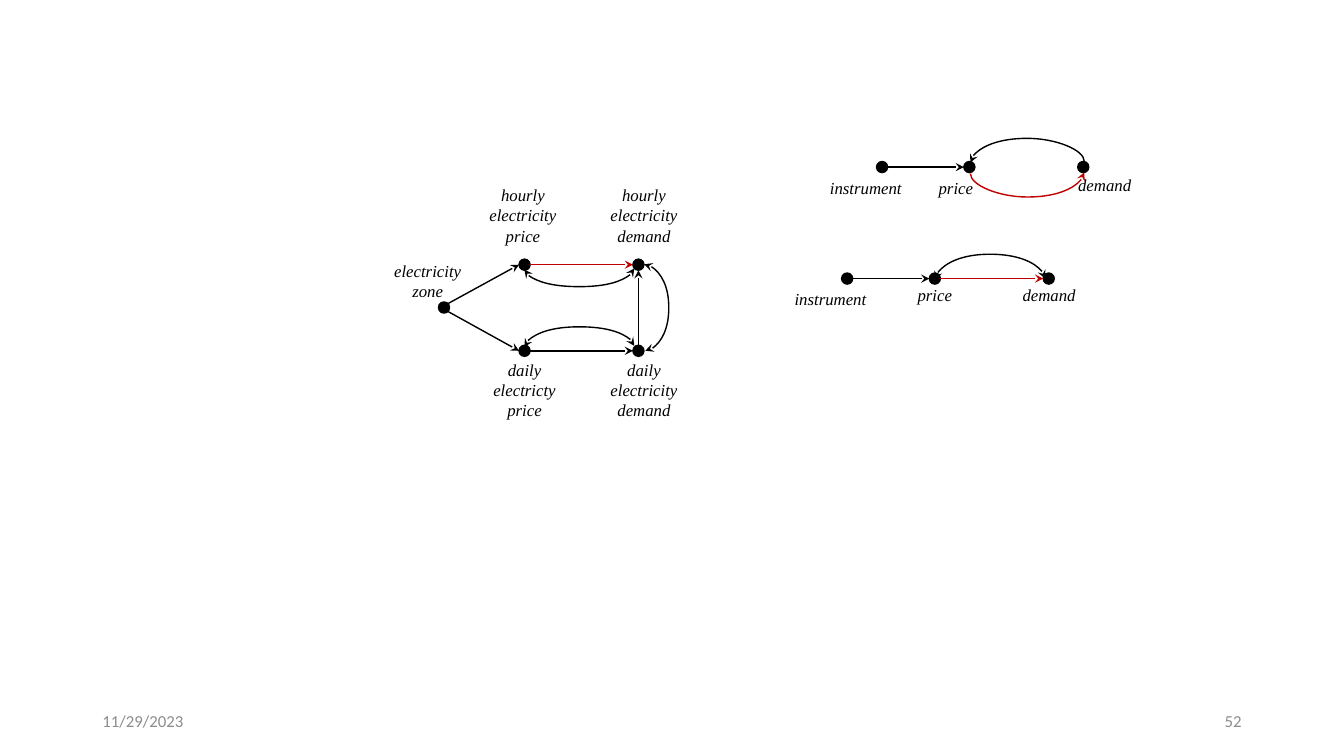
from dataclasses import dataclass
from math import cos, radians, sin

from lxml import etree
from pptx import Presentation
from pptx.dml.color import RGBColor
from pptx.enum import shapes, text
from pptx.oxml.ns import qn
from pptx.shapes.connector import Connector
from pptx.slide import Slide
from pptx.util import Cm, Pt

BLACK = RGBColor(0x00, 0x00, 0x00)
RED = RGBColor(0xC0, 0x00, 0x00)
GRAY = RGBColor(0x8C, 0x8C, 0x8C)

# All lengths below are in centimetres.
RADIUS = 0.14
ARC_DEPTH = 0.03
EAST, SOUTH, SOUTHEAST, WEST, NORTH, NORTHEAST = 0, 90, 45, 180, 270, 315
BULGE_UP, BULGE_RIGHT, BULGE_DOWN = 270, 0, 90


@dataclass(frozen=True)
class Node:
    x: float
    y: float

    def rim(self, angle: float) -> tuple[float, float]:
        """Point on the circle at a clockwise angle from east."""
        return (self.x + RADIUS * cos(radians(angle)),
                self.y + RADIUS * sin(radians(angle)))


@dataclass(frozen=True)
class Arrow:
    start: Node
    leaving: float
    end: Node
    entering: float
    color: RGBColor = BLACK


@dataclass(frozen=True)
class Arc:
    """Curve centred on its chord, bulging towards the given direction."""
    x: float
    y: float
    span: float
    bulge: float
    direction: int
    both_ways: bool = True
    color: RGBColor = BLACK


@dataclass(frozen=True)
class Label:
    words: str
    left: float
    top: float
    width: float
    height: float
    font: str = "Times New Roman"
    italic: bool = True
    color: RGBColor = BLACK
    align: text.PP_ALIGN = text.PP_ALIGN.CENTER


ZONE = Node(11.19, 7.75)
HOURLY_PRICE, HOURLY_DEMAND = Node(13.22, 6.67), Node(16.09, 6.67)
DAILY_PRICE, DAILY_DEMAND = Node(13.22, 8.84), Node(16.09, 8.84)
UPPER = [Node(x, 4.21) for x in (22.23, 24.43, 27.3)]
LOWER = [Node(x, 7.02) for x in (21.35, 23.56, 26.43)]
NODES = [ZONE, HOURLY_PRICE, HOURLY_DEMAND, DAILY_PRICE, DAILY_DEMAND,
         *UPPER, *LOWER]

ARROWS = [
    Arrow(ZONE, NORTHEAST, HOURLY_PRICE, WEST),
    Arrow(ZONE, SOUTHEAST, DAILY_PRICE, WEST),
    Arrow(HOURLY_PRICE, EAST, HOURLY_DEMAND, WEST, RED),
    Arrow(DAILY_PRICE, EAST, DAILY_DEMAND, WEST),
    Arrow(DAILY_DEMAND, NORTH, HOURLY_DEMAND, SOUTH),
    Arrow(UPPER[0], EAST, UPPER[1], WEST),
    Arrow(LOWER[0], EAST, LOWER[1], WEST),
    Arrow(LOWER[1], EAST, LOWER[2], WEST, RED),
]

ARCS = [
    Arc(16.25, 7.75, 2.18, 0.62, BULGE_RIGHT),
    Arc(14.6, 8.73, 2.77, 0.51, BULGE_UP),
    Arc(14.6, 6.78, 2.77, 0.46, BULGE_DOWN),
    Arc(24.95, 7.03, 2.77, 0.64, BULGE_UP),
    Arc(25.89, 4.08, 2.87, 0.61, BULGE_UP, both_ways=False),
    Arc(25.89, 4.36, 2.87, 0.62, BULGE_DOWN, both_ways=False, color=RED),
]

LABELS = [
    Label("electricity zone", 9.6, 6.3, 2.36, 1.55),
    Label("hourly electricity price", 12, 4.65, 2.36, 1.55),
    Label("hourly electricity demand", 14.81, 4.65, 2.84, 1.55),
    Label("daily electricty price", 12.04, 9.04, 2.36, 1.55),
    Label("daily electricity demand", 14.81, 9.04, 2.84, 1.55),
    Label("instrument", 20.37, 3.96, 2.9, 1.55),
    Label("price", 22.91, 4.37, 2.36, 0.74),
    Label("demand", 26.42, 4.34, 2.84, 0.66),
    Label("instrument", 19.48, 6.76, 2.9, 1.55),
    Label("price", 22.38, 7.06, 2.36, 0.74),
    Label("demand", 25.02, 7.09, 2.84, 0.66),
    Label("11/29/2023", 2.33, 17.66, 7.62, 1.01, "Calibri", False, GRAY,
          text.PP_ALIGN.LEFT),
    Label("52", 23.92, 17.66, 7.62, 1.01, "Calibri", False, GRAY,
          text.PP_ALIGN.RIGHT),
]


def draw_node(page: Slide, node: Node) -> None:
    dot = page.shapes.add_shape(
        shapes.MSO_SHAPE.OVAL, Cm(node.x - RADIUS), Cm(node.y - RADIUS),
        Cm(2 * RADIUS), Cm(2 * RADIUS))
    dot.shadow.inherit = False
    dot.fill.solid()
    dot.fill.fore_color.rgb = BLACK
    dot.line.color.rgb = BLACK
    dot.line.width = Pt(1)


def style_line(line: Connector, color: RGBColor, *ends: str) -> None:
    """Colour the line and put stealth arrowheads on the named ends."""
    line.line.color.rgb = color
    line.line.width = Pt(1)
    properties = line.element.spPr
    outline = properties.find(qn("a:ln"))
    for end in ends:
        etree.SubElement(outline, qn(f"a:{end}"), type="stealth")
    etree.SubElement(properties, qn("a:effectLst"))


def draw_arrow(page: Slide, arrow: Arrow) -> None:
    x1, y1 = arrow.start.rim(arrow.leaving)
    x2, y2 = arrow.end.rim(arrow.entering)
    line = page.shapes.add_connector(
        shapes.MSO_CONNECTOR.STRAIGHT, Cm(x1), Cm(y1), Cm(x2), Cm(y2))
    style_line(line, arrow.color, "tailEnd")


def draw_arc(page: Slide, arc: Arc) -> None:
    """Draw a curve bulging right, then turn it to its direction."""
    curve = page.shapes.add_connector(
        shapes.MSO_CONNECTOR.CURVE,
        Cm(arc.x - ARC_DEPTH / 2), Cm(arc.y - arc.span / 2),
        Cm(arc.x + ARC_DEPTH / 2), Cm(arc.y + arc.span / 2))
    properties = curve.element.spPr
    properties.find(qn("a:xfrm")).set("rot", str(arc.direction * 60000))
    guides = properties.find(qn("a:prstGeom")).find(qn("a:avLst"))
    bend = round(arc.bulge / ARC_DEPTH * 100000)
    etree.SubElement(guides, qn("a:gd"), name="adj1", fmla=f"val {bend}")
    ends = ("headEnd", "tailEnd") if arc.both_ways else ("headEnd",)
    style_line(curve, arc.color, *ends)


def draw_label(page: Slide, label: Label) -> None:
    box = page.shapes.add_textbox(
        Cm(label.left), Cm(label.top), Cm(label.width), Cm(label.height))
    frame = box.text_frame
    frame.word_wrap = True
    frame.vertical_anchor = text.MSO_ANCHOR.MIDDLE
    para = frame.paragraphs[0]
    para.text = label.words
    para.alignment = label.align
    para.font.name = label.font
    para.font.size = Pt(12)
    para.font.italic = label.italic
    para.font.color.rgb = label.color


def main() -> None:
    deck = Presentation()
    deck.slide_width, deck.slide_height = Cm(33.87), Cm(19.05)
    page = deck.slides.add_slide(deck.slide_layouts.get_by_name("Blank"))
    for node in NODES:
        draw_node(page, node)
    for arrow in ARROWS:
        draw_arrow(page, arrow)
    for arc in ARCS:
        draw_arc(page, arc)
    for label in LABELS:
        draw_label(page, label)
    deck.save("out.pptx")


if __name__ == "__main__":
    main()
